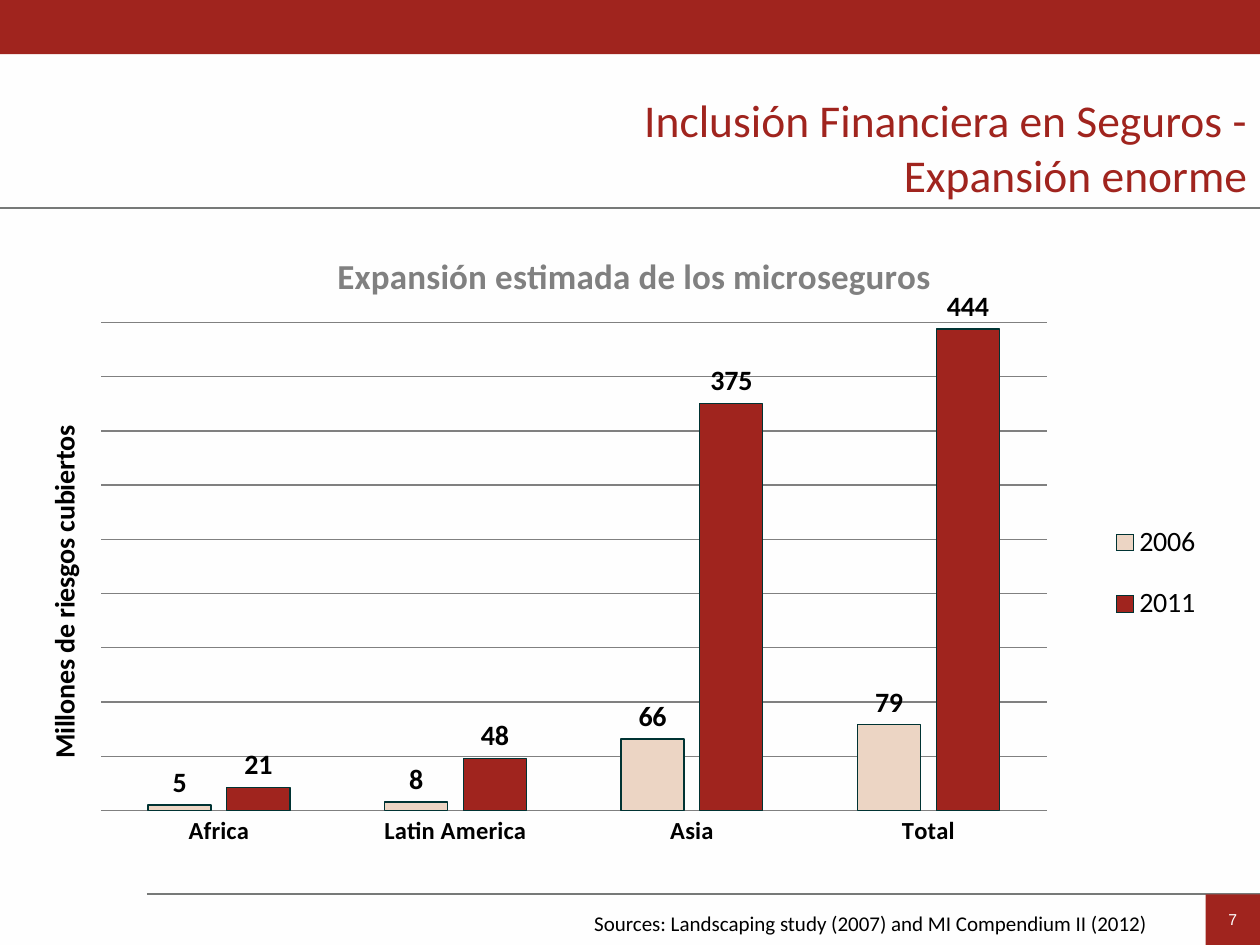
from dataclasses import dataclass

from lxml import etree
from pptx import Presentation
from pptx.chart.data import CategoryChartData
from pptx.dml.color import RGBColor
from pptx.enum import chart as kinds, shapes, text
from pptx.oxml.ns import qn
from pptx.util import Pt


@dataclass(frozen=True)
class Theme:
    face: str = "Calibri"
    plain: str = "Arial"
    paper: str = "FEFEFE"
    red: str = "A0241E"
    sand: str = "ECD5C4"
    rule: str = "777978"
    gray: str = "808080"
    edge: str = "003333"
    ink: str = "000000"
    head: float = 26
    title: float = 20
    label: float = 16
    axis: float = 14
    note: float = 12
    base: float = 10
    small: float = 9


@dataclass(frozen=True)
class Box:
    left: float
    top: float
    width: float
    height: float

    def args(self) -> list:
        return [Pt(n) for n in (self.left, self.top, self.width, self.height)]


@dataclass(frozen=True)
class Rule:
    left: float
    right: float
    y: float


@dataclass(frozen=True)
class Group:
    name: str
    values: tuple
    color: str


THEME = Theme()
RULES = [Rule(84, 720, 511), Rule(0, 720, 119)]
BAND = Box(0, 0, 720, 31)
BADGE = Box(689, 511, 31, 29)
PLACES = ["Africa", "Latin America", "Asia", "Total"]
GROUPS = [
    Group("2006", (5, 8, 66, 79), THEME.sand),
    Group("2011", (21, 48, 375, 444), THEME.red),
]


def ink(value: str) -> RGBColor:
    return RGBColor.from_string(value)


def style(font, size: float, color: str = THEME.ink, bold: bool = False,
          face: str = THEME.face) -> None:
    font.size, font.bold, font.name = Pt(size), bold, face
    font.color.rgb = ink(color)


def write(frame, words: str, *, align=text.PP_ALIGN.LEFT, **look) -> None:
    """Fill a text frame, one paragraph per line of words."""
    for i, line in enumerate(words.split("\n")):
        para = frame.paragraphs[0] if i == 0 else frame.add_paragraph()
        para.alignment = align
        run = para.add_run()
        run.text = line
        style(run.font, **look)


def add_text(slide, box: Box, words: str, **look) -> None:
    frame = slide.shapes.add_textbox(*box.args()).text_frame
    frame.word_wrap = True
    frame.auto_size = text.MSO_AUTO_SIZE.SHAPE_TO_FIT_TEXT
    write(frame, words, **look)


def add_rule(slide, rule: Rule) -> None:
    line = slide.shapes.add_connector(
        shapes.MSO_CONNECTOR.STRAIGHT,
        Pt(rule.left), Pt(rule.y), Pt(rule.right), Pt(rule.y))
    line.line.color.rgb = ink(THEME.rule)
    line.line.width = Pt(1.25)
    etree.SubElement(line._element.spPr, qn("a:effectLst"))


def add_block(slide, box: Box):
    block = slide.shapes.add_shape(shapes.MSO_SHAPE.RECTANGLE, *box.args())
    block.shadow.inherit = False
    block.fill.solid()
    block.fill.fore_color.rgb = ink(THEME.red)
    block.line.fill.background()
    return block


def place(part, inner: bool = False, **spots: float) -> None:
    """Fix a chart part at x, y, w, h as shares of the chart."""
    for old in part.findall(qn("c:layout")):
        part.remove(old)
    layout = etree.Element(qn("c:layout"))
    manual = etree.SubElement(layout, qn("c:manualLayout"))
    if inner:
        etree.SubElement(manual, qn("c:layoutTarget")).set("val", "inner")
    for key in "xy":
        etree.SubElement(manual, qn(f"c:{key}Mode")).set("val", "edge")
    for key, share in spots.items():
        etree.SubElement(manual, qn(f"c:{key}")).set("val", str(share))
    after = part.find(qn("c:overlay"))
    if after is None:
        part.insert(0, layout)
    else:
        after.addprevious(layout)


def add_bars(slide, box: Box) -> None:
    data = CategoryChartData(number_format="0")
    data.categories = PLACES
    for group in GROUPS:
        data.add_series(group.name, group.values)
    chart = slide.shapes.add_chart(
        kinds.XL_CHART_TYPE.COLUMN_CLUSTERED, *box.args(), data).chart
    style(chart.font, THEME.base)

    chart.has_title = True
    write(chart.chart_title.text_frame, "Expansión estimada de los microseguros",
          align=text.PP_ALIGN.CENTER, size=THEME.title, color=THEME.gray, bold=True)
    place(chart.chart_title._element, x=0.25, y=0.05)

    chart.has_legend = True
    legend = chart.legend
    legend.position = kinds.XL_LEGEND_POSITION.RIGHT
    legend.include_in_layout = False
    style(legend.font, THEME.label)
    place(legend._element, x=0.87, y=0.44, w=0.12, h=0.23)

    names = chart.category_axis
    names.major_tick_mark = kinds.XL_TICK_MARK.NONE
    names.format.line.color.rgb = ink(THEME.gray)
    style(names.tick_labels.font, THEME.axis, bold=True)

    scale = chart.value_axis
    scale.minimum_scale, scale.maximum_scale, scale.major_unit = 0, 450, 50
    scale.has_major_gridlines = True
    grid = scale.major_gridlines.format.line
    grid.color.rgb, grid.width = ink(THEME.gray), Pt(0.75)
    scale.has_title = True
    write(scale.axis_title.text_frame, "Millones de riesgos cubiertos",
          align=text.PP_ALIGN.CENTER, size=THEME.label, bold=True)
    turn = scale.axis_title.text_frame._txBody.find(qn("a:bodyPr"))
    turn.set("rot", "-5400000")
    turn.set("vert", "horz")
    place(scale.axis_title._element, x=0.01, y=0.32)
    scale.visible = False

    plot = chart.plots[0]
    plot.gap_width, plot.overlap, plot.vary_by_categories = 150, -25, False
    for group, bars in zip(GROUPS, plot.series):
        bars.format.fill.solid()
        bars.format.fill.fore_color.rgb = ink(group.color)
        bars.format.line.color.rgb = ink(THEME.edge)
        bars.format.line.width = Pt(0.75)
        labels = bars.data_labels
        labels.show_value = True
        labels.position = kinds.XL_LABEL_POSITION.OUTSIDE_END
        labels.number_format, labels.number_format_is_linked = "0", False
        style(labels.font, THEME.label, bold=True)
    area = chart._chartSpace.chart.plotArea
    place(area, inner=True, x=0.06, y=0.17, w=0.78, h=0.75)


def main() -> None:
    deck = Presentation()
    deck.slide_width, deck.slide_height = Pt(720), Pt(540)
    slide = deck.slides.add_slide(deck.slide_layouts[6])
    slide.background.fill.solid()
    slide.background.fill.fore_color.rgb = ink(THEME.paper)

    for rule in RULES:
        add_rule(slide, rule)
    add_block(slide, BAND)
    badge = add_block(slide, BADGE).text_frame
    badge.margin_left = badge.margin_right = 0
    badge.vertical_anchor = text.MSO_ANCHOR.MIDDLE
    write(badge, "7", align=text.PP_ALIGN.CENTER, size=THEME.small,
          color=THEME.paper, face=THEME.plain)
    add_text(slide, Box(220, 49, 500, 70.5),
             "Inclusión Financiera en Seguros -\nExpansión enorme",
             align=text.PP_ALIGN.RIGHT, size=THEME.head, color=THEME.red)
    add_bars(slide, Box(16, 121, 693, 372))
    add_text(slide, Box(332.5, 516.5, 340, 22),
             "Sources: Landscaping study (2007) and MI Compendium II (2012)",
             size=THEME.note)
    deck.save("out.pptx")


if __name__ == "__main__":
    main()
